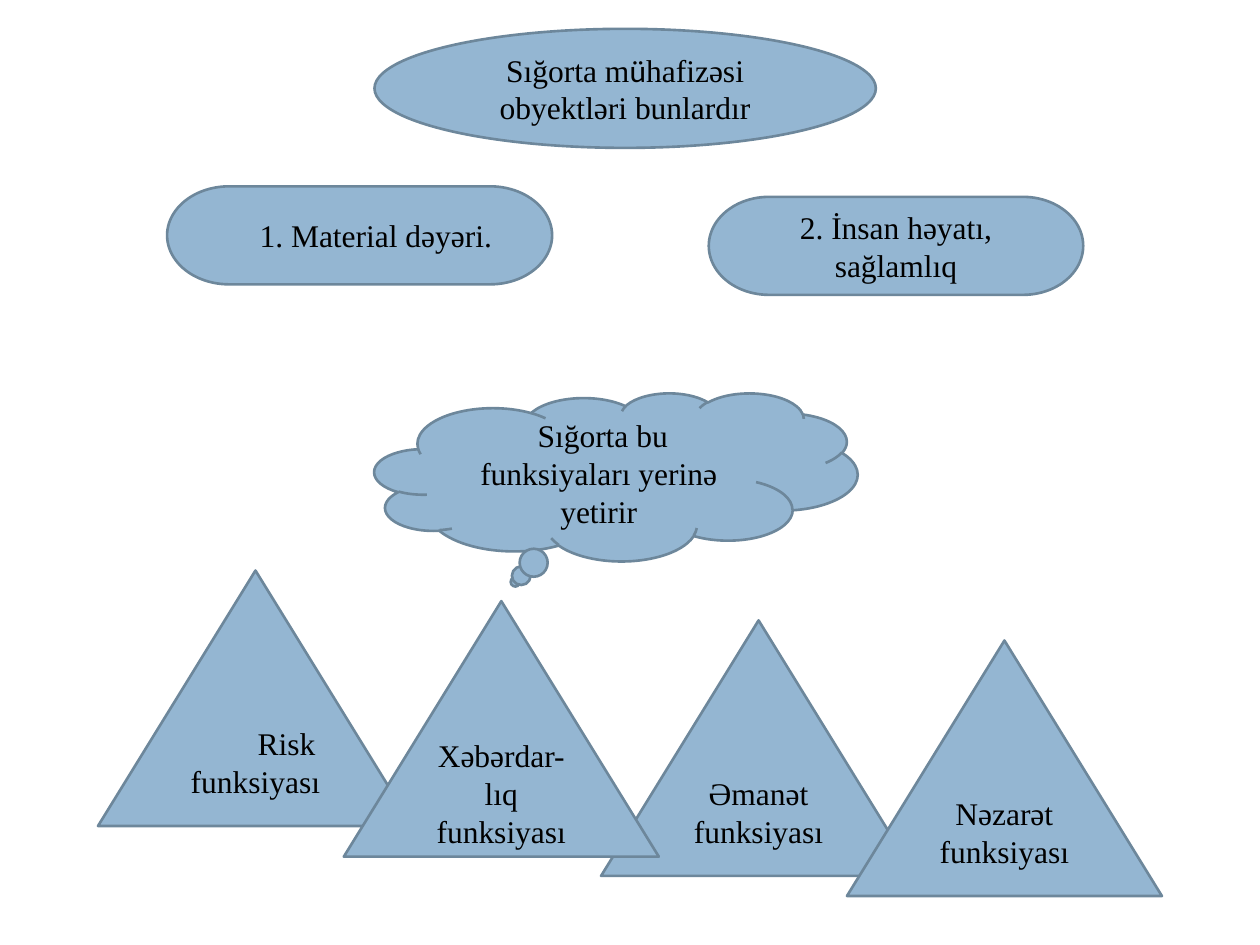
"""Build the slide on insurance objects and functions."""
from dataclasses import dataclass

from pptx import Presentation
from pptx.dml.color import RGBColor as Color
from pptx.enum.shapes import MSO_SHAPE as Preset
from pptx.enum.text import MSO_ANCHOR as Anchor, PP_ALIGN as Align
from pptx.util import Pt


@dataclass(frozen=True)
class Theme:
    fill: Color = Color(0x94, 0xB6, 0xD2)
    outline: Color = Color(0x6D, 0x87, 0x9B)
    text: Color = Color(0, 0, 0)
    font: str = "Times New Roman"
    accent_font: str = "Calibri"
    text_size: float = 18
    outline_width: float = 1.5


def write(paragraph, text, *, font, size, color, align=Align.CENTER, indent=0):
    paragraph.alignment = align
    if indent:
        paragraph._p.get_or_add_pPr().set("indent", str(Pt(indent)))
    run = paragraph.add_run()
    run.text = text
    run.font.name = font
    run.font.size = Pt(size)
    run.font.color.rgb = color


class Canvas:
    def __init__(self, slide, theme):
        self.slide = slide
        self.theme = theme

    def box(self, preset, left, top, width, height, *pieces, **text_format):
        theme = self.theme
        shape = self.slide.shapes.add_shape(
            preset, Pt(left), Pt(top), Pt(width), Pt(height))
        shape.shadow.inherit = False
        shape.fill.solid()
        shape.fill.fore_color.rgb = theme.fill
        shape.line.color.rgb = theme.outline
        shape.line.width = Pt(theme.outline_width)
        frame = shape.text_frame
        frame.word_wrap = True
        frame.vertical_anchor = Anchor.MIDDLE
        for position, piece in enumerate(pieces):
            font = theme.accent_font if position % 2 else theme.font
            write(frame.paragraphs[0], piece, font=font, size=theme.text_size,
                  color=theme.text, **text_format)

    def heading(self, *pieces):
        self.box(Preset.OVAL, 214, 16.5, 286.5, 68, *pieces)

    def item(self, left, top, width, text, **text_format):
        self.box(Preset.FLOWCHART_TERMINATOR, left, top, width, 56, text, **text_format)

    def thought(self, text):
        self.box(Preset.CLOUD_CALLOUT, 214, 224.5, 276, 96, text)

    def function(self, left, top, text, **text_format):
        self.box(Preset.ISOSCELES_TRIANGLE, left, top, 180, 146, text, **text_format)


def main():
    presentation = Presentation()
    presentation.slide_width, presentation.slide_height = Pt(720), Pt(540)
    slide = presentation.slides.add_slide(presentation.slide_layouts[6])
    canvas = Canvas(slide, Theme())
    first_indent = 35.4

    canvas.heading("Sığorta m", "ü", "hafizəsi obyektləri bunlardır")
    canvas.item(95.5, 106.5, 220, "1. Material dəyəri.",
                align=Align.LEFT, indent=first_indent)
    canvas.item(405, 112.5, 214, "2. İnsan həyatı, sağlamlıq")
    canvas.thought(" Sığorta bu funksiyaları yerinə yetirir")
    canvas.function(343.5, 354.5, "Əmanət funksiyası")
    canvas.function(56, 326, "Risk funksiyası", indent=first_indent)
    canvas.function(196.5, 343.5, "Xəbərdar-lıq funksiyası")
    canvas.function(484, 366, "Nəzarət funksiyası")
    presentation.save("out.pptx")


if __name__ == "__main__":
    main()
